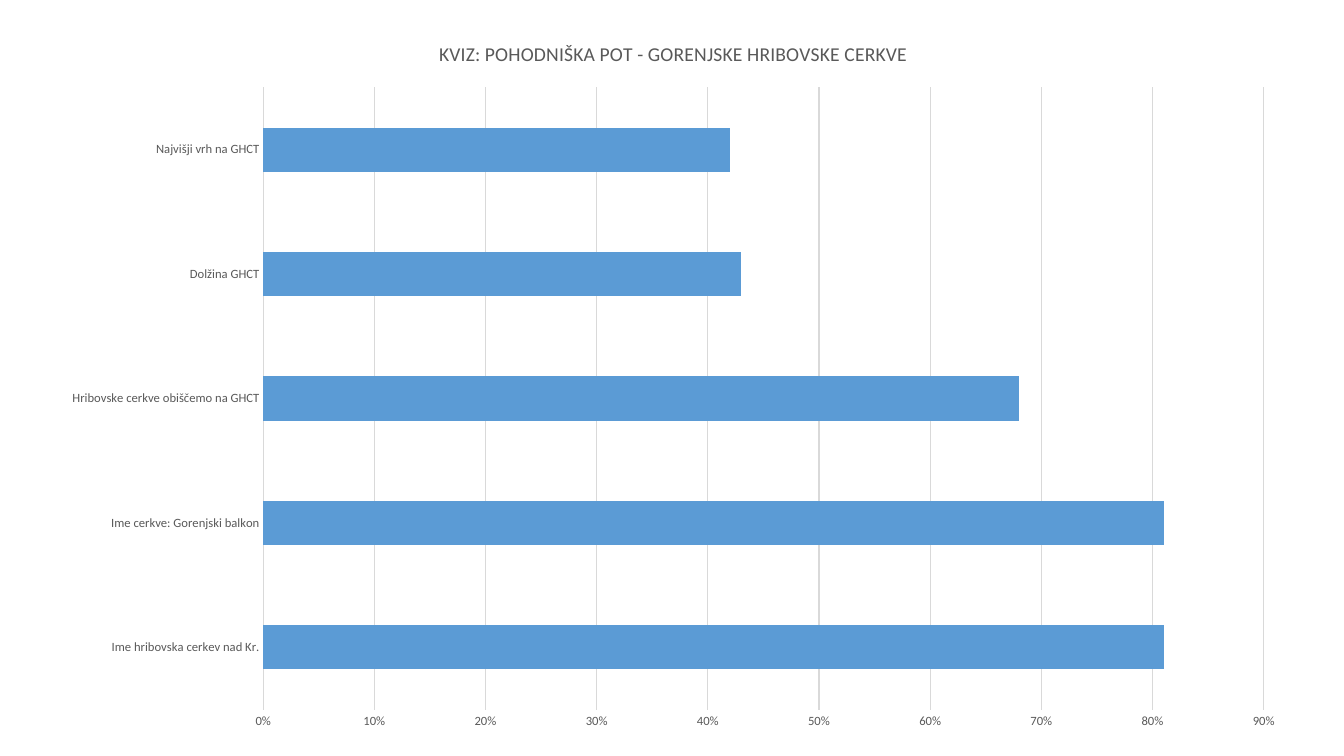
from pptx import Presentation
from pptx import util as u
from pptx.chart.data import CategoryChartData
from pptx.dml.color import RGBColor
from pptx.enum import chart as ch

BAR_BLUE = RGBColor(0x5B, 0x9B, 0xD5)
TEXT_GRAY = RGBColor(0x59, 0x59, 0x59)
GRID_GRAY = RGBColor(0xD9, 0xD9, 0xD9)
FONT = "Calibri"
TITLE = "KVIZ: POHODNIŠKA POT - GORENJSKE HRIBOVSKE CERKVE"
RESULTS = {
    "Ime hribovska cerkev nad Kr.": 0.81,
    "Ime cerkve: Gorenjski balkon": 0.81,
    "Hribovske cerkve obiščemo na GHCT": 0.68,
    "Dolžina GHCT": 0.43,
    "Najvišji vrh na GHCT": 0.42,
}


def style_font(font, size):
    font.name = FONT
    font.size = u.Pt(size)
    font.bold = False
    font.color.rgb = TEXT_GRAY


def style_line(line):
    line.color.rgb = GRID_GRAY
    line.width = u.Pt(0.75)


def style_axis(axis):
    axis.major_tick_mark = axis.minor_tick_mark = ch.XL_TICK_MARK.NONE
    style_font(axis.tick_labels.font, 9)


def add_quiz_chart(slide, left, top, width, height):
    answers = CategoryChartData(number_format="0%")
    answers.categories = list(RESULTS)
    answers.add_series("Series 1", list(RESULTS.values()))
    quiz = slide.shapes.add_chart(
        ch.XL_CHART_TYPE.BAR_CLUSTERED, left, top, width, height, answers
    ).chart
    style_font(quiz.font, 10)
    quiz.has_legend = False
    quiz.has_title = True
    quiz.chart_title.include_in_layout = False
    heading = quiz.chart_title.text_frame
    heading.text = TITLE
    style_font(heading.paragraphs[0].font, 14)

    questions, shares = quiz.category_axis, quiz.value_axis
    style_axis(questions)
    style_line(questions.format.line)
    style_axis(shares)
    shares.format.line.fill.background()
    shares.has_major_gridlines = True
    style_line(shares.major_gridlines.format.line)
    shares.minimum_scale, shares.maximum_scale, shares.major_unit = 0, 0.9, 0.1
    shares.tick_labels.number_format = "0%"
    shares.tick_labels.number_format_is_linked = False

    bars = quiz.plots[0]
    bars.gap_width = 182
    bars.vary_by_categories = False
    bars.series[0].format.fill.solid()
    bars.series[0].format.fill.fore_color.rgb = BAR_BLUE


def main():
    deck = Presentation()
    deck.slide_width, deck.slide_height = u.Inches(13.33), u.Inches(7.5)
    slide = deck.slides.add_slide(deck.slide_layouts[6])
    add_quiz_chart(slide, u.Inches(0.47), u.Inches(0.17), u.Inches(12.42), u.Inches(7.2))
    deck.save("out.pptx")


if __name__ == "__main__":
    main()
